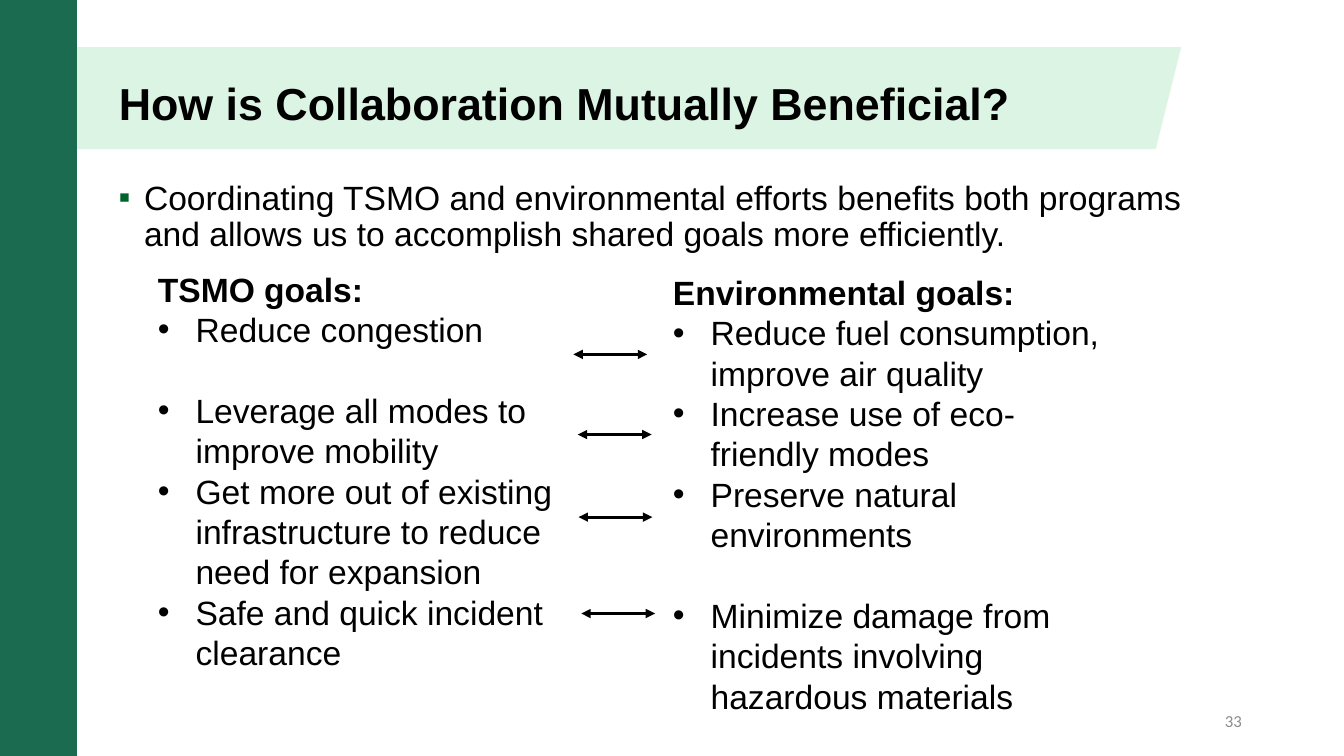
from lxml.etree import SubElement
from pptx import Presentation
from pptx.dml.color import RGBColor
from pptx.enum.shapes import MSO_CONNECTOR, MSO_SHAPE
from pptx.enum.text import MSO_ANCHOR, PP_ALIGN
from pptx.oxml.ns import qn
from pptx.util import Cm, Pt

BLACK = RGBColor(0x00, 0x00, 0x00)
GRAY = RGBColor(0x8C, 0x8C, 0x8C)
MINT = RGBColor(0xDC, 0xF4, 0xE3)
GREEN = RGBColor(0x1B, 0x6B, 0x50)
BULLET_GREEN = RGBColor(0x00, 0x63, 0x2C)
LINE_GAP = 29

TITLE = "How is Collaboration Mutually Beneficial?"
INTRO = ("Coordinating TSMO and environmental efforts benefits both programs "
         "and allows us to accomplish shared goals more efficiently.")
TSMO_GOALS = [
    ("Reduce congestion", 0),
    ("Leverage all modes to improve mobility", LINE_GAP),
    ("Get more out of existing infrastructure to reduce need for expansion", 0),
    ("Safe and quick incident clearance", 0),
]
ENVIRONMENTAL_GOALS = [
    ("Reduce fuel consumption, improve air quality", 0),
    ("Increase use of eco-friendly modes", 0),
    ("Preserve natural environments", 0),
    ("Minimize damage from incidents involving hazardous materials", LINE_GAP),
]
ARROW_STARTS = [(14.45, 8.93), (14.56, 10.95), (14.58, 13.03), (14.65, 15.46)]
ARROW_LENGTH = 1.86


def format_text(para, size, color=BLACK, bold=False, name="Arial"):
    """Set the font of every run in a paragraph."""
    for span in para.runs:
        span.font.name = name
        span.font.size = Pt(size)
        span.font.bold = bold
        span.font.color.rgb = color


def add_bullet(para, symbol, indent, color=BLACK):
    """Give a paragraph a hanging bullet."""
    properties = para._p.get_or_add_pPr()
    properties.set("marL", str(Cm(indent)))
    properties.set("indent", str(-Cm(indent)))
    tint = SubElement(properties, qn("a:buClr"))
    SubElement(tint, qn("a:srgbClr"), val=str(color))
    SubElement(properties, qn("a:buFont"), typeface="Arial")
    SubElement(properties, qn("a:buChar"), char=symbol)


def add_text_box(page, left, top, width, height):
    """Add a wrapping text box and return its text frame."""
    box = page.shapes.add_textbox(Cm(left), Cm(top), Cm(width), Cm(height))
    box.text_frame.word_wrap = True
    return box.text_frame


def add_panel(page, kind, color, left, top, width, height):
    """Add a plain filled background shape."""
    panel = page.shapes.add_shape(kind, Cm(left), Cm(top), Cm(width), Cm(height))
    panel.shadow.inherit = False
    panel.fill.solid()
    panel.fill.fore_color.rgb = color
    panel.line.fill.background()


def place_title(page, left, top, width, height):
    """Move and format the title placeholder above the background."""
    title = page.shapes.title
    title.left, title.top, title.width, title.height = map(Cm, (left, top, width, height))
    page.shapes._spTree.append(title._element)
    frame = title.text_frame
    frame.text = TITLE
    frame.word_wrap = True
    frame.vertical_anchor = MSO_ANCHOR.MIDDLE
    para = frame.paragraphs[0]
    para.alignment = PP_ALIGN.LEFT
    para.line_spacing = 0.9
    format_text(para, 32, bold=True)


def add_intro(page, left, top, width, height):
    """Add the introductory bullet."""
    para = add_text_box(page, left, top, width, height).paragraphs[0]
    para.text = INTRO
    para.line_spacing = 0.9
    add_bullet(para, "▪", 0.64, BULLET_GREEN)
    format_text(para, 24)


def add_goals(page, heading, goals, left, top, width, height):
    """Add a bold heading followed by a list of goals."""
    frame = add_text_box(page, left, top, width, height)
    frame.text = heading
    format_text(frame.paragraphs[0], 24, bold=True)
    for goal, gap in goals:
        para = frame.add_paragraph()
        para.text = goal
        para.space_before = Pt(gap)
        add_bullet(para, "•", 0.95)
        format_text(para, 24)


def add_double_arrow(page, left, top, length):
    """Add a horizontal arrow with a head at each end."""
    arrow = page.shapes.add_connector(
        MSO_CONNECTOR.STRAIGHT, Cm(left), Cm(top), Cm(left + length), Cm(top))
    arrow.line.color.rgb = BLACK
    arrow.line.width = Pt(2.25)
    outline = arrow.line._get_or_add_ln()
    for end in ("a:headEnd", "a:tailEnd"):
        SubElement(outline, qn(end), type="triangle")
    SubElement(arrow._element.spPr, qn("a:effectLst"))


def add_page_number(page, number, left, top, width, height):
    """Add the right-aligned page number."""
    frame = add_text_box(page, left, top, width, height)
    frame.text = number
    frame.vertical_anchor = MSO_ANCHOR.MIDDLE
    para = frame.paragraphs[0]
    para.alignment = PP_ALIGN.RIGHT
    format_text(para, 12, GRAY, name="Calibri")


def main():
    """Build and save the slide."""
    deck = Presentation()
    deck.slide_width, deck.slide_height = Cm(33.87), Cm(19.05)
    page = deck.slides.add_slide(deck.slide_layouts[5])
    add_panel(page, MSO_SHAPE.PARALLELOGRAM, MINT, 0.61, 1.19, 29.16, 2.57)
    add_panel(page, MSO_SHAPE.RECTANGLE, GREEN, 0, 0, 1.94, 19.05)
    place_title(page, 2.74, 1.96, 25.86, 1.4)
    add_intro(page, 2.74, 4.44, 28.8, 2.1)
    add_page_number(page, "33", 23.93, 17.65, 7.62, 1.02)
    add_goals(page, "TSMO goals:", TSMO_GOALS, 3.73, 6.65, 11.46, 10.52)
    add_goals(page, "Environmental goals:", ENVIRONMENTAL_GOALS, 16.71, 6.73, 11.66, 11.53)
    for left, top in ARROW_STARTS:
        add_double_arrow(page, left, top, ARROW_LENGTH)
    deck.save("out.pptx")


if __name__ == "__main__":
    main()
